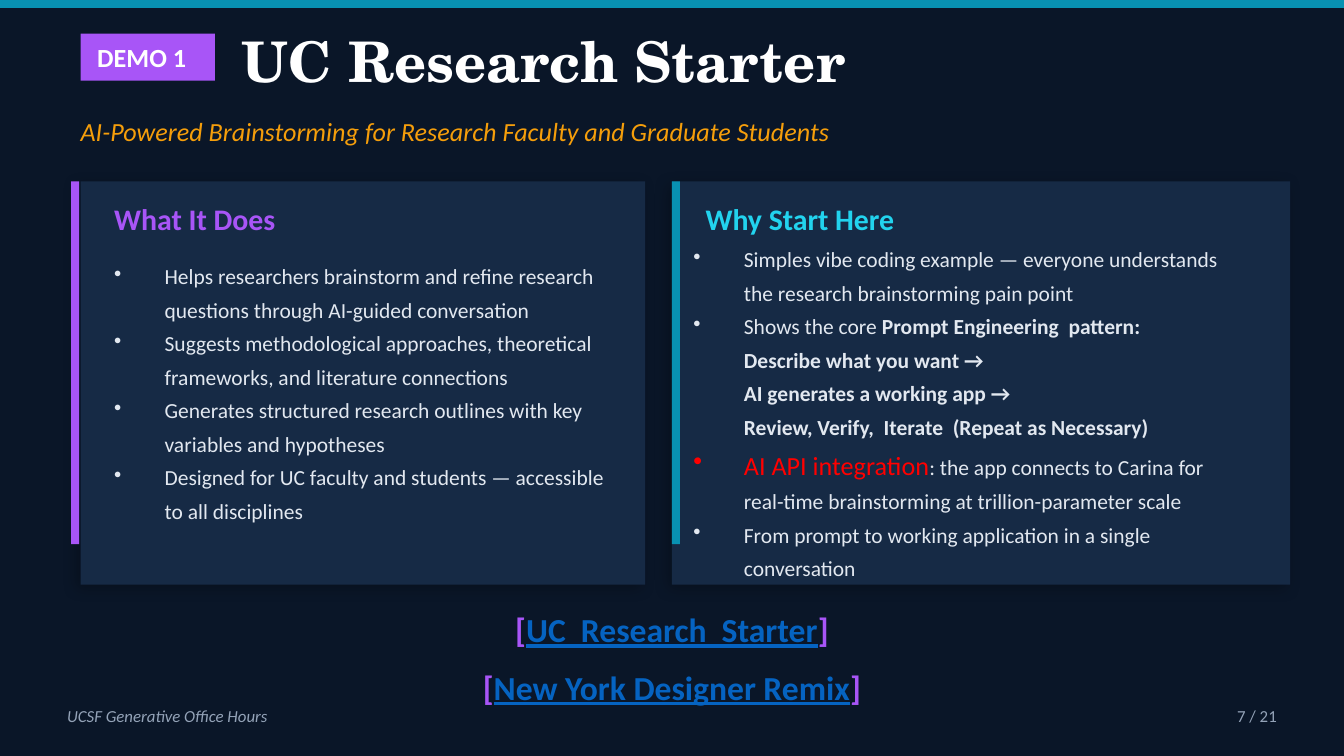
from dataclasses import dataclass
from typing import NamedTuple, Optional

from lxml.etree import SubElement
from pptx import Presentation
from pptx.dml.color import RGBColor
from pptx.enum.shapes import MSO_SHAPE
from pptx.enum.text import MSO_ANCHOR, PP_ALIGN
from pptx.oxml.ns import qn
from pptx.util import Inches, Pt

NAVY = RGBColor(0x0A, 0x16, 0x28)
PANEL = RGBColor(0x16, 0x2A, 0x45)
TEAL = RGBColor(0x08, 0x91, 0xB2)
CYAN = RGBColor(0x22, 0xD3, 0xEE)
PURPLE = RGBColor(0xA8, 0x55, 0xF7)
AMBER = RGBColor(0xF5, 0x9E, 0x0B)
PALE = RGBColor(0xE2, 0xE8, 0xF0)
GRAY = RGBColor(0x94, 0xA3, 0xB8)
BLUE = RGBColor(0x05, 0x63, 0xC1)
RED = RGBColor(0xFF, 0x00, 0x00)
WHITE = RGBColor(0xFF, 0xFF, 0xFF)
SANS = "Calibri"
SERIF = "TeX Gyre Schola"
INDENT = Inches(3 / 8)


class Box(NamedTuple):
    left: float
    top: float
    width: float
    height: float


class Style(NamedTuple):
    size: float
    color: RGBColor
    bold: bool = False
    italic: bool = False
    face: str = SANS


class Part(NamedTuple):
    text: str
    size: Optional[float] = None
    color: Optional[RGBColor] = None
    bold: Optional[bool] = None
    line: Optional[bool] = None


@dataclass
class Card:
    panel: Box
    bar: float
    accent: RGBColor
    title: str
    tint: RGBColor
    head: Box
    body: Box
    items: list[list[Part]]


BODY = Style(11.5, PALE)
LINK = Style(18, PURPLE, bold=True)
FOOT = Style(9, GRAY)

CARDS = [
    Card(
        Box(0.6, 1.35, 4.2, 3), 0.53, PURPLE, "What It Does", PURPLE,
        Box(0.85, 1.45, 3.8, 0.35), Box(0.85, 1.85, 3.8, 2.1),
        [
            [Part("Helps researchers brainstorm and refine research questions through AI-guided conversation")],
            [Part("Suggests methodological approaches, theoretical frameworks, and literature connections")],
            [Part("Generates structured research outlines with key variables and hypotheses")],
            [Part("Designed for UC faculty and students — accessible to all disciplines")],
        ],
    ),
    Card(
        Box(5, 1.35, 4.6, 3), 5, TEAL, "Why Start Here", CYAN,
        Box(5.25, 1.45, 4, 0.35), Box(5.16, 2, 4.09, 2.1),
        [
            [Part("Simples vibe coding example — everyone understands the research brainstorming pain point")],
            [
                Part("Shows the core "),
                Part(
                    "Prompt Engineering  pattern:\nDescribe what you want →\n"
                    "AI generates a working app →\n"
                    "Review, Verify,  Iterate  (Repeat as Necessary)",
                    bold=True,
                ),
            ],
            [
                Part("AI API integration", size=14, color=RED),
                Part(": the app connects to Carina for real-time brainstorming at trillion-parameter scale"),
            ],
            [Part("From prompt to working application in a single conversation")],
        ],
    ),
]


def add_rect(slide, box: Box, fill: RGBColor):
    rect = slide.shapes.add_shape(MSO_SHAPE.RECTANGLE, *map(Inches, box))
    rect.shadow.inherit = False
    rect.fill.solid()
    rect.fill.fore_color.rgb = fill
    rect.line.fill.background()
    return rect


def add_shade(shape) -> None:
    effects = shape._element.spPr.find(qn("a:effectLst"))
    shade = SubElement(
        effects, qn("a:outerShdw"), blurRad=str(Pt(8)), dist=str(Pt(3)),
        dir=str(135 * 60000), algn="bl", rotWithShape="0",
    )
    color = SubElement(shade, qn("a:srgbClr"), val="000000")
    SubElement(color, qn("a:alpha"), val="25000")


def set_frame(shape):
    frame = shape.text_frame
    frame.word_wrap = True
    frame.vertical_anchor = MSO_ANCHOR.MIDDLE
    frame.margin_left = frame.margin_right = 0
    frame.margin_top = frame.margin_bottom = 0
    return frame


def set_font(font, style: Style) -> None:
    font.name = style.face
    font.size = Pt(style.size)
    font.color.rgb = style.color
    font.bold = style.bold
    font.italic = style.italic


def add_part(para, part: Part) -> None:
    for index, text in enumerate(part.text.split("\n")):
        if index:
            para.add_line_break()
        run = para.add_run()
        run.text = text
        if part.size is not None:
            run.font.size = Pt(part.size)
        if part.color is not None:
            run.font.color.rgb = part.color
        if part.bold is not None:
            run.font.bold = part.bold
        if part.line is not None:
            run.font.underline = part.line


def write(para, parts: list[Part], style: Style, align=PP_ALIGN.LEFT) -> None:
    para.alignment = align
    set_font(para.font, style)
    for part in parts:
        add_part(para, part)


def add_text(slide, box: Box, parts: list[Part], style: Style, align=PP_ALIGN.LEFT) -> None:
    frame = set_frame(slide.shapes.add_textbox(*map(Inches, box)))
    write(frame.paragraphs[0], parts, style, align)


def add_list(slide, box: Box, items: list[list[Part]]) -> None:
    frame = set_frame(slide.shapes.add_textbox(*map(Inches, box)))
    for index, parts in enumerate(items):
        para = frame.add_paragraph() if index else frame.paragraphs[0]
        props = para._p.get_or_add_pPr()
        props.set("marL", str(INDENT))
        props.set("indent", str(-INDENT))
        SubElement(props, qn("a:buSzPct"), val="100000")
        SubElement(props, qn("a:buChar"), char="•")
        para.line_spacing = 1.3
        write(para, parts, BODY)


def add_card(slide, card: Card) -> None:
    add_shade(add_rect(slide, card.panel, PANEL))
    add_rect(slide, Box(card.bar, card.panel.top, 0.06, 2.7), card.accent)
    add_text(slide, card.head, [Part(card.title)], Style(16, card.tint, bold=True))
    add_list(slide, card.body, card.items)


def main() -> None:
    deck = Presentation()
    deck.slide_width = Inches(10)
    deck.slide_height = Inches(10 * 9 / 16)
    slide = deck.slides.add_slide(deck.slide_layouts[6])
    slide.background.fill.solid()
    slide.background.fill.fore_color.rgb = NAVY

    add_rect(slide, Box(0, 0, 10, 0.06), TEAL)
    frame = set_frame(add_rect(slide, Box(0.6, 0.25, 1, 0.35), PURPLE))
    frame.margin_right = Inches(0.09)
    write(frame.paragraphs[0], [Part("DEMO 1")], Style(14, WHITE, bold=True), PP_ALIGN.CENTER)
    add_text(slide, Box(1.8, 0.2, 7.5, 0.5), [Part("UC Research Starter")],
             Style(30, WHITE, bold=True, face=SERIF))
    add_text(slide, Box(0.6, 0.8, 9, 0.35),
             [Part("AI-Powered Brainstorming for Research Faculty and Graduate Students")],
             Style(14, AMBER, italic=True))
    for card in CARDS:
        add_card(slide, card)
    for top, name in ((4.43, "UC  Research  Starter"), (4.86, "New York Designer Remix")):
        parts = [Part("["), Part(name, color=BLUE, line=True), Part("]")]
        add_text(slide, Box(3, top, 4, 0.5), parts, LINK, PP_ALIGN.CENTER)
    add_text(slide, Box(0.5, 5.15, 4, 0.35), [Part("UCSF Generative Office Hours")],
             FOOT._replace(italic=True))
    add_text(slide, Box(8.5, 5.15, 1, 0.35), [Part("7 / 21")], FOOT, PP_ALIGN.RIGHT)
    deck.save("out.pptx")


if __name__ == "__main__":
    main()
